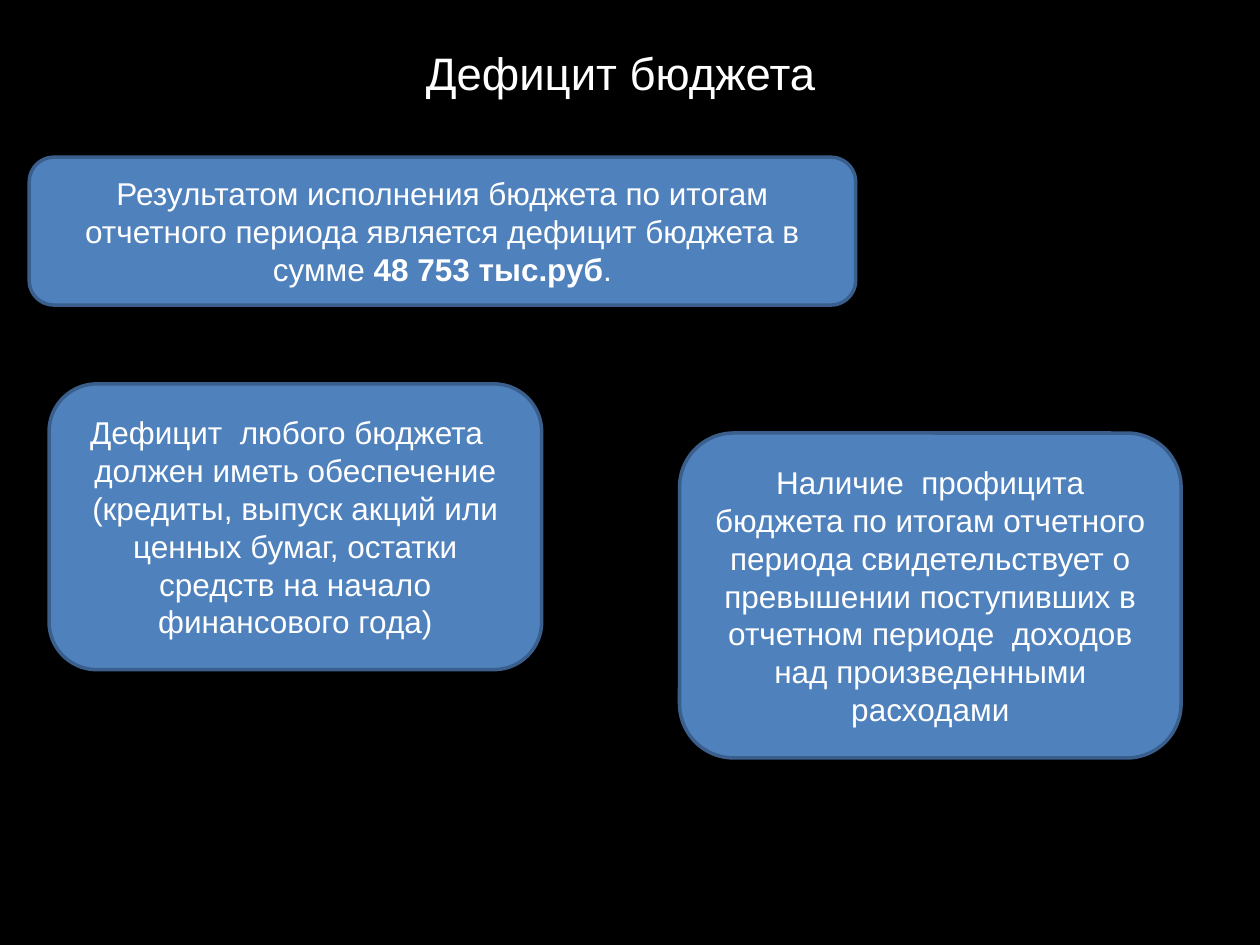
import pptx
import pptx.util
import pptx.dml.color
import pptx.enum.shapes
import pptx.enum.text

Cm = pptx.util.Cm
Pt = pptx.util.Pt
Align = pptx.enum.text.PP_ALIGN
Anchor = pptx.enum.text.MSO_ANCHOR

FONT = "Arial"
COLORS = {"back": "000000", "text": "FFFFFF", "box": "4F81BD", "edge": "3A5F8C"}


def color(name):
    return pptx.dml.color.RGBColor.from_string(COLORS[name])


def write(frame, runs, size, align, anchor):
    """Fill a frame with one paragraph of (text, bold) runs."""
    frame.word_wrap = True
    frame.vertical_anchor = anchor
    para = frame.paragraphs[0]
    para.alignment = align
    for text, bold in runs:
        run = para.add_run()
        run.text = text
        run.font.name = FONT
        run.font.size = Pt(size)
        run.font.bold = bold
        run.font.color.rgb = color("text")


def add_title(slide, text, left, top, width, height):
    title = slide.shapes.title
    title.left, title.top = Cm(left), Cm(top)
    title.width, title.height = Cm(width), Cm(height)
    write(title.text_frame, [(text, False)], 26, Align.LEFT, Anchor.TOP)
    title.text_frame.auto_size = pptx.enum.text.MSO_AUTO_SIZE.NONE


def add_box(slide, runs, left, top, width, height):
    box = slide.shapes.add_shape(
        pptx.enum.shapes.MSO_SHAPE.ROUNDED_RECTANGLE,
        Cm(left), Cm(top), Cm(width), Cm(height))
    box.shadow.inherit = False
    box.fill.solid()
    box.fill.fore_color.rgb = color("box")
    box.line.color.rgb = color("edge")
    box.line.width = Pt(2)
    write(box.text_frame, runs, 18, Align.CENTER, Anchor.MIDDLE)


def main():
    deck = pptx.Presentation()
    deck.slide_width, deck.slide_height = Cm(25.4), Cm(19.05)
    slide = deck.slides.add_slide(deck.slide_layouts[5])

    # Background
    fill = slide.background.fill
    fill.solid()
    fill.fore_color.rgb = color("back")

    # Heading
    add_title(slide, "Дефицит бюджета", 8.33, 0.79, 9.93, 1.37)

    # Result of the period
    add_box(slide, [
        ("Результатом исполнения бюджета по итогам отчетного периода "
         "является дефицит бюджета в сумме ", False),
        ("48 753 тыс.руб", True),
        (".", False),
    ], 0.59, 3.17, 16.66, 2.98)

    # Meaning of a surplus
    add_box(slide, [
        ("Наличие  профицита бюджета по итогам отчетного периода "
         "свидетельствует о превышении поступивших в отчетном периоде  "
         "доходов над произведенными расходами", False),
    ], 13.7, 8.73, 10.11, 6.55)

    # Cover for a deficit
    add_box(slide, [
        ("Дефицит  любого бюджета   должен иметь обеспечение (кредиты, "
         "выпуск акций или ценных бумаг, остатки средств на начало "
         "финансового года)", False),
    ], 0.99, 7.74, 9.93, 5.76)

    deck.save("out.pptx")


if __name__ == "__main__":
    main()
